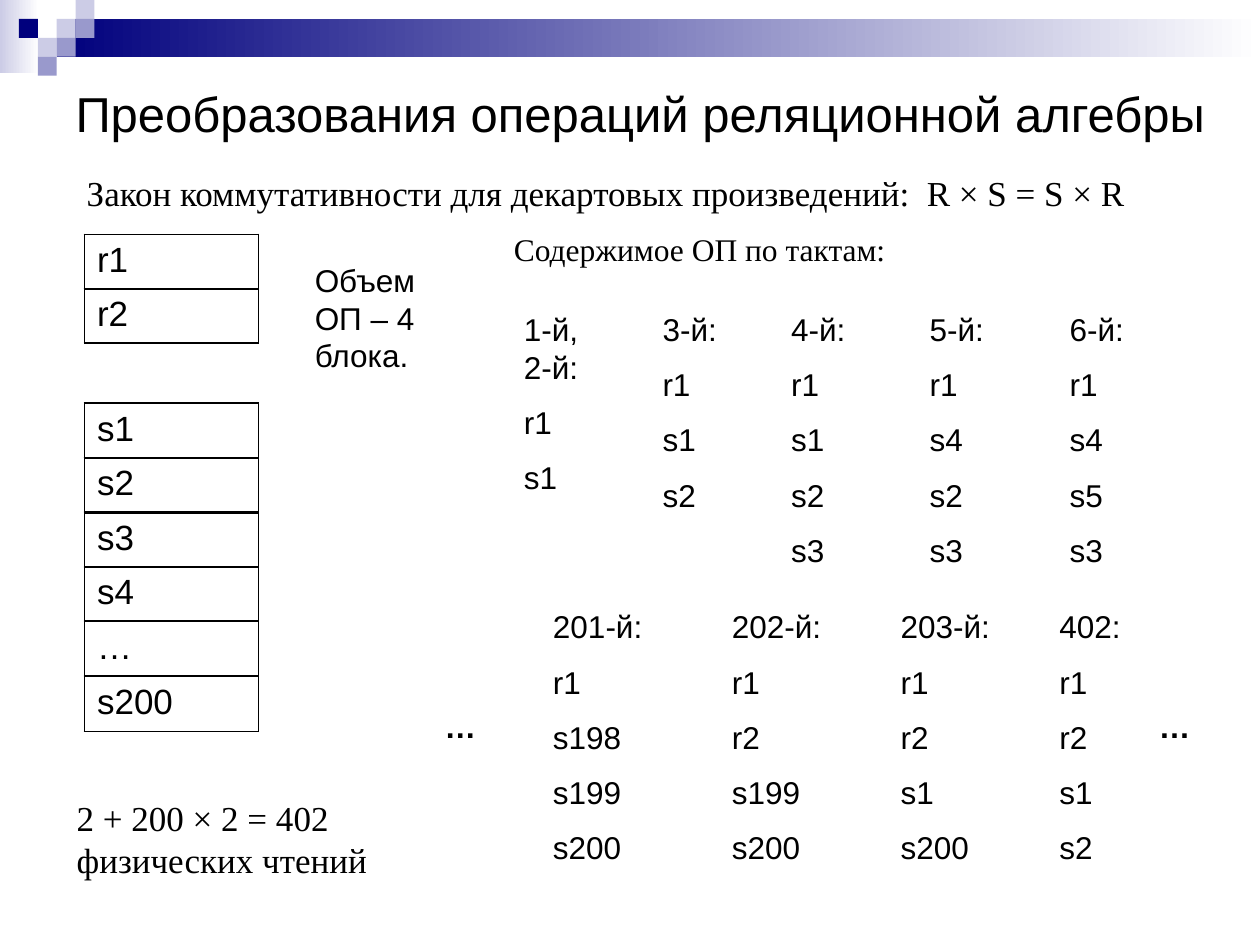
from dataclasses import dataclass

from lxml.etree import SubElement
from pptx import Presentation
from pptx.dml.color import RGBColor
from pptx.enum.shapes import MSO_SHAPE as Shape
from pptx.enum.text import MSO_ANCHOR as Anchor, MSO_AUTO_SIZE as AutoSize, PP_ALIGN as Align
from pptx.oxml.ns import qn
from pptx.util import Inches, Pt


@dataclass(frozen=True)
class Theme:
    """Colours, fonts and type sizes of the deck."""
    ink: str = "000000"
    paper: str = "FFFFFF"
    navy: str = "00007D"
    violet: str = "9999CC"
    lilac: str = "CCCCE6"
    sans: str = "Arial"
    serif: str = "Times New Roman"
    title_size: int = 28
    large_size: int = 20
    text_size: int = 18
    text_gap: int = 10


class SlideBuilder:
    """Holds the theme and the current slide and adds elements to it."""

    def __init__(self, slide, theme):
        self.slide = slide
        self.theme = theme

    def style(self, paragraph, font_name, size, bold=False):
        """Format one left-aligned paragraph."""
        paragraph.alignment = Align.LEFT
        font = paragraph.font
        font.name, font.size, font.bold = font_name, Pt(size), bold
        font.color.rgb = RGBColor.from_string(self.theme.ink)

    def title(self, text, left, top, width, height):
        """Fill and place the title placeholder."""
        shape = self.slide.shapes.title
        shape.left, shape.top = Inches(left), Inches(top)
        shape.width, shape.height = Inches(width), Inches(height)
        frame = shape.text_frame
        frame.text = text
        frame.auto_size = AutoSize.NONE
        frame.vertical_anchor = Anchor.MIDDLE
        self.style(frame.paragraphs[0], self.theme.sans, self.theme.title_size)

    def rectangle(self, left, top, width, height, color, end_color=None):
        """Add a borderless rectangle, solid or fading to the right."""
        shape = self.slide.shapes.add_shape(
            Shape.RECTANGLE, Inches(left), Inches(top), Inches(width), Inches(height))
        shape.shadow.inherit = False
        shape.line.fill.background()
        if end_color:
            shape.fill.gradient()
            shape.fill.gradient_angle = 0
            for stop, stop_color in zip(shape.fill.gradient_stops, (color, end_color)):
                stop.color.rgb = RGBColor.from_string(stop_color)
        else:
            shape.fill.solid()
            shape.fill.fore_color.rgb = RGBColor.from_string(color)

    def text(self, lines, left, top, width, height, font_name=None, size=None, bold=False, gap=0):
        """Add a wrapped text box with one paragraph per line."""
        box = self.slide.shapes.add_textbox(
            Inches(left), Inches(top), Inches(width), Inches(height))
        frame = box.text_frame
        frame.word_wrap = True
        frame.text = "\n".join(lines)
        for index, paragraph in enumerate(frame.paragraphs):
            self.style(paragraph, font_name or self.theme.sans, size or self.theme.text_size, bold)
            paragraph.space_before = Pt(gap if index else 0)

    def block(self, text, left, top, width, height):
        """Add a one-cell table that stands for a disk block."""
        table = self.slide.shapes.add_table(
            1, 1, Inches(left), Inches(top), Inches(width), Inches(height)).table
        table.first_row = table.horz_banding = False
        cell = table.cell(0, 0)
        cell.text = text
        self.style(cell.text_frame.paragraphs[0], self.theme.sans, self.theme.large_size)
        properties = cell._tc.get_or_add_tcPr()
        for side in ("a:lnL", "a:lnR", "a:lnT", "a:lnB"):
            line = SubElement(properties, qn(side), w=str(Pt(1)))
            fill = SubElement(line, qn("a:solidFill"))
            SubElement(fill, qn("a:srgbClr"), val=self.theme.ink)
        cell.fill.background()

    def relation(self, names, top):
        """Stack the blocks of one relation."""
        height = 0.433
        for index, name in enumerate(names):
            self.block(name, 0.67, round(top + index * height, 2), 1.38, height)

    def banner(self):
        """Add the fading bands and the mosaic of squares."""
        theme, side = self.theme, 0.15
        self.rectangle(0, 0, 0.31, 0.58, theme.lilac, theme.paper)
        self.rectangle(0.45, side, 9.55, 0.3, theme.navy, theme.paper)
        squares = [(3, 1, theme.lilac), (4, 0, theme.lilac), (4, 1, theme.violet),
                   (2, 2, theme.lilac), (1, 1, theme.navy), (3, 2, theme.violet),
                   (2, 3, theme.violet)]
        for column, row, color in squares:
            self.rectangle(column * side, row * side, side, side, color)


def main():
    """Build the slide and save it."""
    presentation = Presentation()
    presentation.slide_width, presentation.slide_height = Inches(10), Inches(7.5)
    theme = Theme()
    slide = presentation.slides.add_slide(presentation.slide_layouts[5])
    builder = SlideBuilder(slide, theme)

    builder.banner()
    builder.title("Преобразования операций реляционной алгебры", 0.5, 0.5, 9.3, 0.79)
    builder.text(["Закон коммутативности для декартовых произведений:  R × S = S × R"],
                 0.59, 1.31, 8.5, 0.43, theme.serif, theme.large_size)
    builder.text(["2 + 200 × 2 = 402", "физических чтений"],
                 0.51, 6.27, 2.6, 0.77, theme.serif, theme.large_size)

    builder.relation(["r1", "r2"], 1.86)
    builder.relation(["s1", "s2", "s3", "s4", "…", "s200"], 3.2)

    builder.text(["Объем ОП – 4 блока."], 2.4, 2.02, 1.18, 1.45)
    builder.text(["Содержимое ОП по тактам:"], 3.98, 1.78, 5.59, 0.4, theme.serif)

    first_top, last_top = 2.41, 4.77
    memory_states = [
        (4.06, first_top, 0.71, "1-й, 2-й:", "r1 s1"),
        (5.16, first_top, 0.79, "3-й:", "r1 s1 s2"),
        (6.18, first_top, 0.79, "4-й:", "r1 s1 s2 s3"),
        (7.28, first_top, 0.79, "5-й:", "r1 s4 s2 s3"),
        (8.39, first_top, 0.79, "6-й:", "r1 s4 s5 s3"),
        (4.29, last_top, 1.02, "201-й:", "r1 s198 s199 s200"),
        (5.71, last_top, 1.1, "202-й:", "r1 r2 s199 s200"),
        (7.05, last_top, 1.1, "203-й:", "r1 r2 s1 s200"),
        (8.31, last_top, 1.02, "402:", "r1 r2 s1 s2"),
    ]
    for left, top, width, step, blocks in memory_states:
        builder.text([step, *blocks.split()], left, top, width, 2.21, gap=theme.text_gap)
    for left, width in ((3.43, 0.87), (9.1, 0.67)):
        builder.text(["…"], left, 5.56, width, 0.4, bold=True)

    presentation.save("out.pptx")


if __name__ == "__main__":
    main()
